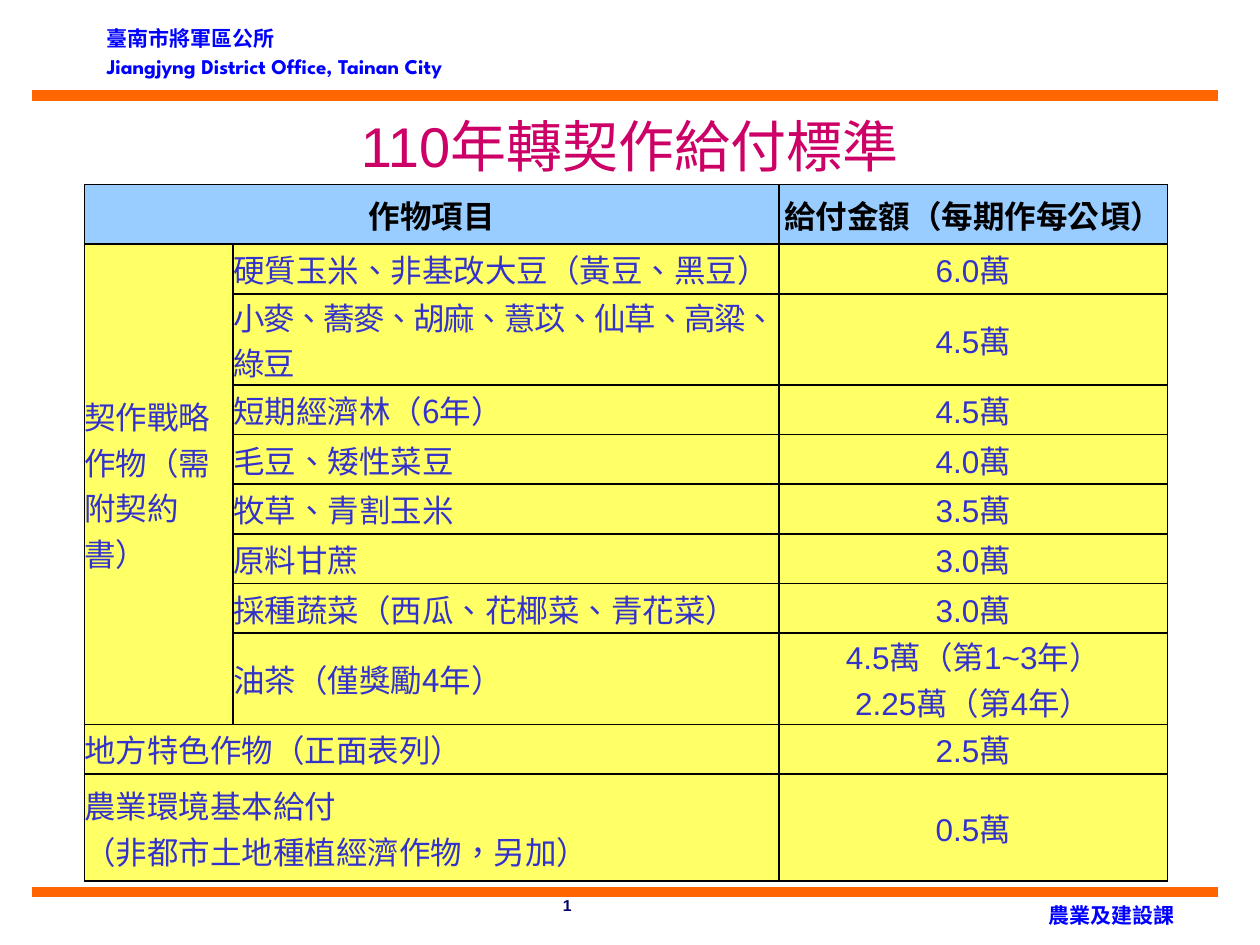
from typing import NamedTuple

import pptx
import pptx.dml.color
import pptx.enum.shapes
import pptx.enum.text
import pptx.oxml
import pptx.oxml.ns
import pptx.util

Pt = pptx.util.Pt
RGBColor = pptx.dml.color.RGBColor
PP_ALIGN = pptx.enum.text.PP_ALIGN
MSO_ANCHOR = pptx.enum.text.MSO_ANCHOR

BLUE = RGBColor(0x00, 0x00, 0xFF)
NAVY = RGBColor(0x00, 0x00, 0x66)
ORANGE = RGBColor(0xFF, 0x66, 0x00)
MAGENTA = RGBColor(0xCC, 0x00, 0x66)
BLACK = RGBColor(0x00, 0x00, 0x00)
INDIGO = RGBColor(0x33, 0x33, 0xCC)
SKY = RGBColor(0x99, 0xCC, 0xFF)
YELLOW = RGBColor(0xFF, 0xFF, 0x66)

CJK = "Noto Sans CJK SC"
ARIAL = "Arial"
TIMES = "Times New Roman"


class Label(NamedTuple):
    left: float
    top: float
    width: float
    height: float
    lines: list[str]
    size: float
    font: str
    color: RGBColor
    bold: bool = True
    align: PP_ALIGN = PP_ALIGN.LEFT
    anchor: MSO_ANCHOR = MSO_ANCHOR.TOP
    wrap: bool = True
    line_spacing: float = 1.0
    space_before: float = 0


class Row(NamedTuple):
    height: float
    crop: str
    amount: str
    font: str = CJK
    tracking: float = 0


LABELS = [
    Label(54, 15.1, 255, 34.6, ["臺南市將軍區公所", "Jiangjyng District Office, Tainan City"],
          12, "League Spartan", BLUE, line_spacing=0.7, space_before=6),
    Label(581, 514.8, 108, 15.8, ["農業及建設課"], 12, ARIAL, BLUE,
          align=PP_ALIGN.CENTER, anchor=MSO_ANCHOR.MIDDLE, wrap=False),
    Label(314.6, 508.3, 25.2, 18, ["1"], 9, ARIAL, NAVY, wrap=False),
    Label(36, 57.5, 648, 51.1, ["110年轉契作給付標準"], 32, ARIAL, MAGENTA, bold=False,
          align=PP_ALIGN.CENTER, anchor=MSO_ANCHOR.MIDDLE),
]

RULE_LEFT, RULE_RIGHT = 18, 696.2
RULE_TOPS = [54.7, 509.8]

TABLE_LEFT, TABLE_TOP = 48.2, 105.5
COLUMN_WIDTHS = [85, 312, 222]
HEADER_HEIGHT, SINGLE, DOUBLE, LAST = 34, 28.4, 52.1, 61.2

CONTRACT_GROUP = "契作戰略作物（需附契約書）"
CONTRACT_ROWS = [
    Row(SINGLE, "硬質玉米、非基改大豆（黃豆、黑豆）", "6.0萬"),
    # Slightly tightened so that the first line keeps its closing comma inside the cell.
    Row(DOUBLE, "小麥、蕎麥、胡麻、薏苡、仙草、高粱、綠豆", "4.5萬", tracking=-0.8),
    Row(SINGLE, "短期經濟林（6年）", "4.5萬"),
    Row(SINGLE, "毛豆、矮性菜豆", "4.0萬"),
    Row(SINGLE, "牧草、青割玉米", "3.5萬"),
    Row(SINGLE, "原料甘蔗", "3.0萬"),
    Row(SINGLE, "採種蔬菜（西瓜、花椰菜、青花菜）", "3.0萬"),
    Row(DOUBLE, "油茶（僅獎勵4年）", "4.5萬（第1~3年）\n2.25萬（第4年）"),
]
OTHER_ROWS = [
    Row(SINGLE, "地方特色作物（正面表列）", "2.5萬"),
    Row(LAST, "農業環境基本給付\n（非都市土地種植經濟作物，另加）", "0.5萬", TIMES),
]


def style(p, size: float, font: str, color: RGBColor, bold: bool, align: PP_ALIGN) -> None:
    p.alignment = align
    p.font.size = Pt(size)
    p.font.name = font
    p.font.bold = bold
    p.font.color.rgb = color


def add_label(s, label: Label) -> None:
    sp = s.shapes.add_textbox(Pt(label.left), Pt(label.top), Pt(label.width), Pt(label.height))
    tf = sp.text_frame
    tf.word_wrap = label.wrap
    tf.vertical_anchor = label.anchor
    tf.text = "\n".join(label.lines)
    for i, p in enumerate(tf.paragraphs):
        style(p, label.size, label.font, label.color, label.bold, label.align)
        p.line_spacing = label.line_spacing
        p.space_before = Pt(label.space_before if i else 0)


def add_rule(s, top: float) -> None:
    line = s.shapes.add_connector(pptx.enum.shapes.MSO_CONNECTOR.STRAIGHT,
                                  Pt(RULE_LEFT), Pt(top), Pt(RULE_RIGHT), Pt(top))
    line.line.color.rgb = ORANGE
    line.line.width = Pt(6)
    line._element.spPr.append(pptx.oxml.parse_xml(
        f"<a:effectLst {pptx.oxml.ns.nsdecls('a')}/>"))


def add_borders(cell) -> None:
    """Draw a 1 pt black line on all four sides; call before filling the cell."""
    for side in ("lnL", "lnR", "lnT", "lnB"):
        cell._tc.get_or_add_tcPr().append(pptx.oxml.parse_xml(
            f'<a:{side} {pptx.oxml.ns.nsdecls("a")} w="{Pt(1)}">'
            f'<a:solidFill><a:srgbClr val="{BLACK}"/></a:solidFill></a:{side}>'))


def fill_cell(cell, text: str, font: str, align: PP_ALIGN, header: bool = False,
              tracking: float = 0) -> None:
    """Write the text as Traditional Chinese, with letter spacing in points."""
    cell.text = text
    for p in cell.text_frame.paragraphs:
        style(p, 18, font, BLACK if header else INDIGO, header, align)
        for r in p.runs:
            properties = r._r.get_or_add_rPr()
            properties.set("lang", "zh-TW")
            if tracking:
                properties.set("spc", str(round(tracking * 100)))


def add_payment_table(s) -> None:
    rows = CONTRACT_ROWS + OTHER_ROWS
    heights = [HEADER_HEIGHT] + [row.height for row in rows]
    table = s.shapes.add_table(len(heights), len(COLUMN_WIDTHS), Pt(TABLE_LEFT), Pt(TABLE_TOP),
                               Pt(sum(COLUMN_WIDTHS)), Pt(sum(heights))).table
    for column, width in zip(table.columns, COLUMN_WIDTHS):
        column.width = Pt(width)
    for i, height in enumerate(heights):
        table.rows[i].height = Pt(height)
        for cell in table.rows[i].cells:
            cell.margin_left = cell.margin_right = cell.margin_top = cell.margin_bottom = 0
            cell.vertical_anchor = MSO_ANCHOR.MIDDLE
            add_borders(cell)
            cell.fill.solid()
            cell.fill.fore_color.rgb = YELLOW if i else SKY

    last_contract = len(CONTRACT_ROWS)
    table.cell(0, 0).merge(table.cell(0, 1))
    table.cell(1, 0).merge(table.cell(last_contract, 0))
    fill_cell(table.cell(0, 0), "作物項目", CJK, PP_ALIGN.CENTER, header=True)
    fill_cell(table.cell(0, 2), "給付金額（每期作每公頃）", CJK, PP_ALIGN.CENTER, header=True)
    fill_cell(table.cell(1, 0), CONTRACT_GROUP, CJK, PP_ALIGN.LEFT)
    for i, row in enumerate(rows, start=1):
        in_group = i <= last_contract
        if not in_group:
            table.cell(i, 0).merge(table.cell(i, 1))
        fill_cell(table.cell(i, 1 if in_group else 0), row.crop, row.font, PP_ALIGN.LEFT,
                  tracking=row.tracking)
        fill_cell(table.cell(i, 2), row.amount, ARIAL, PP_ALIGN.CENTER)


def main() -> None:
    prs = pptx.Presentation()
    prs.slide_width, prs.slide_height = Pt(720), Pt(540)
    s = prs.slides.add_slide(prs.slide_layouts[6])
    for top in RULE_TOPS:
        add_rule(s, top)
    for label in LABELS:
        add_label(s, label)
    add_payment_table(s)
    prs.save("out.pptx")


if __name__ == "__main__":
    main()
